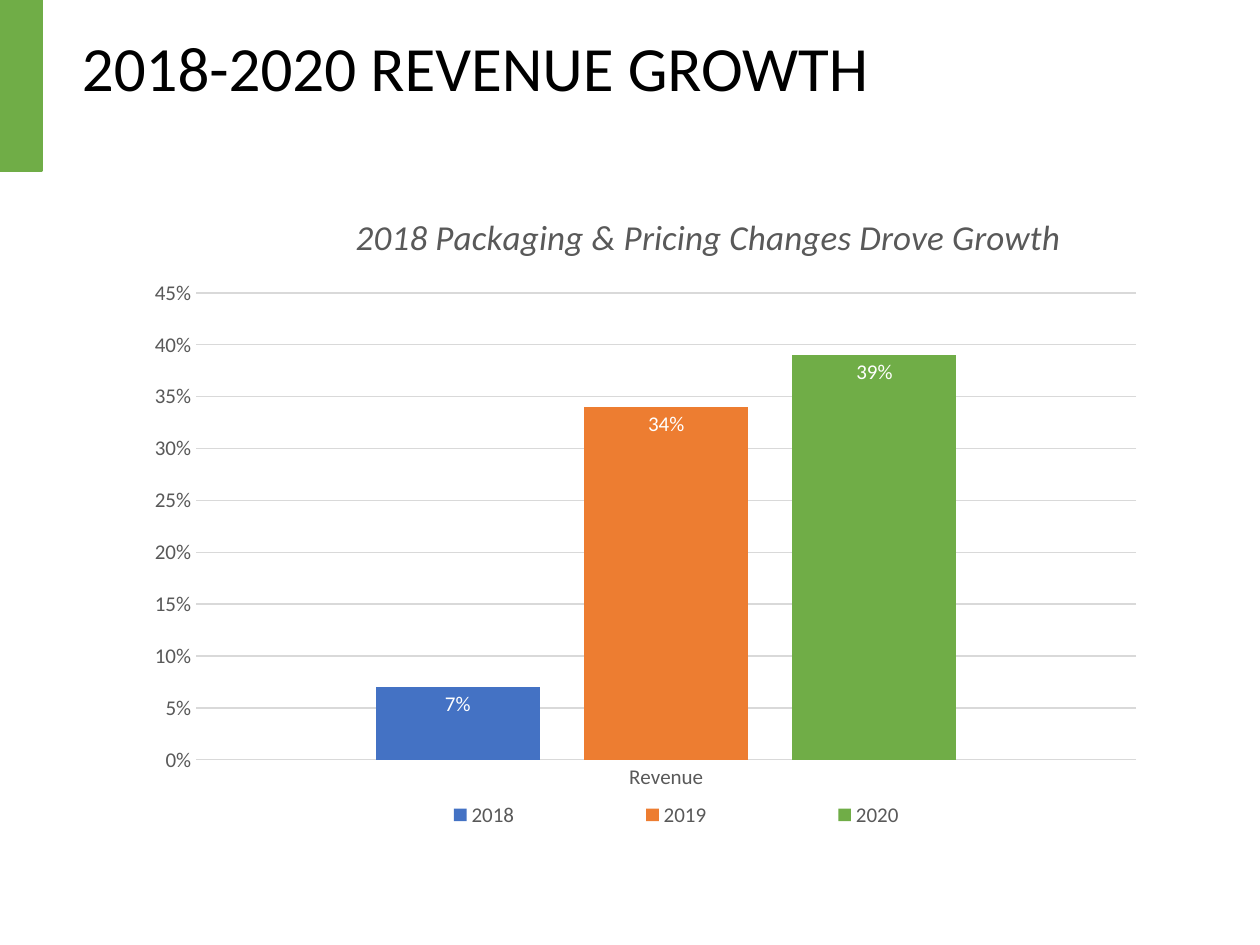
"""Build the revenue growth slide with its clustered column chart."""
from dataclasses import dataclass

from lxml import etree
from pptx import Presentation
from pptx.chart.data import CategoryChartData
from pptx.dml.color import RGBColor
from pptx.enum.chart import XL_CHART_TYPE, XL_LABEL_POSITION, XL_LEGEND_POSITION, XL_TICK_MARK
from pptx.enum.shapes import MSO_SHAPE
from pptx.enum.text import MSO_ANCHOR, PP_ALIGN
from pptx.oxml.ns import qn
from pptx.util import Inches, Pt

COLUMNS = XL_CHART_TYPE.COLUMN_CLUSTERED
INSIDE_END = XL_LABEL_POSITION.INSIDE_END
BOTTOM = XL_LEGEND_POSITION.BOTTOM
NO_TICK = XL_TICK_MARK.NONE
RECTANGLE = MSO_SHAPE.RECTANGLE
MIDDLE = MSO_ANCHOR.MIDDLE
LEFT = PP_ALIGN.LEFT

BLACK = RGBColor(0x00, 0x00, 0x00)
WHITE = RGBColor(0xFF, 0xFF, 0xFF)
GRAY = RGBColor(0x59, 0x59, 0x59)
LIGHT_GRAY = RGBColor(0xD9, 0xD9, 0xD9)
BLUE = RGBColor(0x44, 0x72, 0xC4)
ORANGE = RGBColor(0xED, 0x7D, 0x31)
GREEN = RGBColor(0x70, 0xAD, 0x47)

FONT = "Calibri"
PERCENT = "0%"
WIDTH = Inches(10)
HEIGHT = Inches(7.5)


@dataclass(frozen=True)
class Area:
    """Position and size as shares of the enclosing object."""
    left: float
    top: float
    width: float = 0
    height: float = 0

    def on_page(self) -> tuple[int, int, int, int]:
        """Return the lengths on the slide."""
        return (int(self.left * WIDTH), int(self.top * HEIGHT),
                int(self.width * WIDTH), int(self.height * HEIGHT))


@dataclass(frozen=True)
class Year:
    """One column of the chart."""
    name: str
    growth: float
    color: RGBColor


YEARS = (Year("2018", 0.07, BLUE), Year("2019", 0.34, ORANGE), Year("2020", 0.39, GREEN))
TITLE_AREA = Area(0, 0, 1, 0.15)
ACCENT_AREA = Area(0, 0, 0.033, 0.18)
CHART_AREA = Area(0.107, 0.204, 0.811, 0.693)
PLOT_AREA = Area(0.06, 0.153, 0.92, 0.713)
LEGEND_AREA = Area(0.19, 0.92, 0.68, 0.06)
CHART_TITLE_AREA = Area(0.21, 0.02)


def style_font(font, size: float, color: RGBColor, italic: bool = False) -> None:
    """Set the format of a font."""
    font.name = FONT
    font.size = Pt(size)
    font.color.rgb = color
    font.bold = False
    font.italic = italic


def write_text(frame, text: str, size: float, color: RGBColor, italic: bool = False,
               align=None, line_spacing: float | None = None) -> None:
    """Write one formatted paragraph into a text frame."""
    para = frame.paragraphs[0]
    para.alignment = align
    para.line_spacing = line_spacing
    span = para.add_run()
    span.text = text
    style_font(span.font, size, color, italic)


def place_part(element, area: Area, index: int, inner: bool = False) -> None:
    """Give a chart part a manual layout."""
    for old in element.findall(qn("c:layout")):
        element.remove(old)
    layout = etree.Element(qn("c:layout"))
    manual = etree.SubElement(layout, qn("c:manualLayout"))
    settings = [("layoutTarget", "inner")] if inner else []
    settings += [("xMode", "edge"), ("yMode", "edge"), ("x", area.left), ("y", area.top)]
    if area.width:
        settings += [("w", area.width), ("h", area.height)]
    for tag, value in settings:
        etree.SubElement(manual, qn(f"c:{tag}")).set("val", str(value))
    element.insert(index, layout)


def style_axes(chart) -> None:
    """Format both axes and the grid."""
    for axis in (chart.category_axis, chart.value_axis):
        axis.major_tick_mark = axis.minor_tick_mark = NO_TICK
        style_font(axis.tick_labels.font, 12, GRAY)
    scale = chart.value_axis
    scale.minimum_scale, scale.maximum_scale, scale.major_unit = 0, 0.45, 0.05
    scale.tick_labels.number_format = PERCENT
    scale.tick_labels.number_format_is_linked = False
    scale.format.line.fill.background()
    for line in (chart.category_axis.format.line, scale.major_gridlines.format.line):
        line.color.rgb = LIGHT_GRAY
        line.width = Pt(0.75)


def style_columns(plot) -> None:
    """Colour and label each year's column."""
    plot.gap_width, plot.overlap, plot.vary_by_categories = 219, -27, False
    for year, series in zip(YEARS, plot.series):
        series.format.fill.solid()
        series.format.fill.fore_color.rgb = year.color
        labels = series.data_labels
        labels.show_value = True
        labels.position = INSIDE_END
        labels.number_format = PERCENT
        labels.number_format_is_linked = False
        style_font(labels.font, 12, WHITE)


def add_growth_chart(page) -> None:
    """Add the chart with its title and legend."""
    data = CategoryChartData(number_format=PERCENT)
    data.categories = ["Revenue"]
    for year in YEARS:
        data.add_series(year.name, [year.growth])
    chart = page.shapes.add_chart(COLUMNS, *CHART_AREA.on_page(), data).chart
    style_font(chart.font, 10, BLACK)
    style_axes(chart)
    style_columns(chart.plots[0])

    title = chart.chart_title
    write_text(title.text_frame, "2018 Packaging & Pricing Changes Drove Growth",
               size=20, color=GRAY, italic=True)
    chart.has_legend = True
    legend = chart.legend
    legend.position = BOTTOM
    legend.include_in_layout = False
    style_font(legend.font, 12, GRAY)

    place_part(title._element, CHART_TITLE_AREA, index=1)
    place_part(legend._element, LEGEND_AREA, index=1)
    place_part(chart._chartSpace.chart.plotArea, PLOT_AREA, index=0, inner=True)


def add_title(page) -> None:
    """Fill and move the title placeholder."""
    title = page.shapes.title
    title.left, title.top, title.width, title.height = TITLE_AREA.on_page()
    frame = title.text_frame
    frame.vertical_anchor = MIDDLE
    frame.margin_left = Inches(0.65)
    write_text(frame, "2018-2020 REVENUE GROWTH", size=36, color=BLACK,
               align=LEFT, line_spacing=0.9)


def add_accent(page) -> None:
    """Add the green block in the corner."""
    accent = page.shapes.add_shape(RECTANGLE, *ACCENT_AREA.on_page())
    accent.shadow.inherit = False
    accent.fill.solid()
    accent.fill.fore_color.rgb = GREEN
    accent.line.color.rgb = GREEN
    accent.line.width = Pt(2)


def main() -> None:
    """Build and save the deck."""
    deck = Presentation()
    deck.slide_width, deck.slide_height = WIDTH, HEIGHT
    page = deck.slides.add_slide(deck.slide_layouts.get_by_name("Title Only"))
    add_title(page)
    add_accent(page)
    add_growth_chart(page)
    deck.save("out.pptx")


if __name__ == "__main__":
    main()
